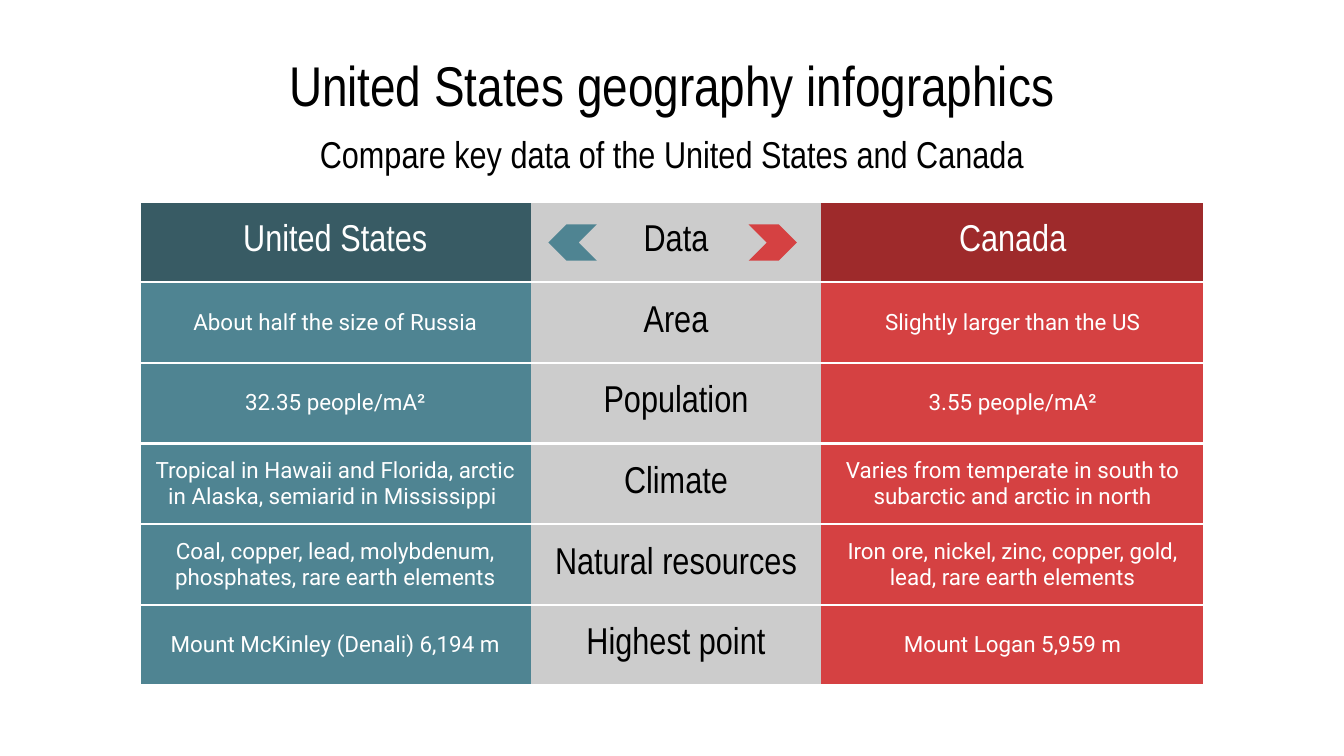
from typing import NamedTuple

from lxml.etree import SubElement
from pptx import Presentation
from pptx.dml.color import RGBColor
from pptx.enum.shapes import MSO_SHAPE
from pptx.enum.text import MSO_ANCHOR as Anchor, PP_ALIGN as Align
from pptx.oxml.ns import qn
from pptx.util import Inches, Pt

HEADING_FONT, BODY_FONT = "Arial Narrow", "Roboto"
BLACK, WHITE, GREY = "000000", "FFFFFF", "CCCCCC"
TEAL, DARK_TEAL = "4F8492", "385B64"
RED, DARK_RED = "D54142", "9E2A2B"
INSET = Inches(0.1)
SLIDE_WIDTH = 10
SLIDE_HEIGHT = SLIDE_WIDTH * 9 / 16


class Heading(NamedTuple):
    text: str
    left: float
    top: float
    width: float
    height: float
    size: int
    anchor: Anchor


class Column(NamedTuple):
    width: float
    header_fill: str
    body_fill: str
    color: str
    body_font: str
    body_size: int


class Arrow(NamedTuple):
    left: float
    fill: str
    rotation: int


HEADINGS = [
    Heading("United States geography infographics", 0.5, 0.28, 9, 0.63, 30, Anchor.TOP),
    Heading("Compare key data of the United States and Canada",
            2.11, 0.92, 5.78, 0.44, 20, Anchor.MIDDLE),
]
COLUMNS = [
    Column(2.91, DARK_TEAL, TEAL, WHITE, BODY_FONT, 12),
    Column(2.16, GREY, GREY, BLACK, HEADING_FONT, 20),
    Column(2.85, DARK_RED, RED, WHITE, BODY_FONT, 12),
]
ROWS = [
    ("United States", "Data", "Canada"),
    ("About half the size of Russia", "Area", "Slightly larger than the US"),
    ("32.35 people/mA²", "Population", "3.55 people/mA²"),
    ("Tropical in Hawaii and Florida, arctic in Alaska, semiarid in Mississippi ",
     "Climate", "Varies from temperate in south to subarctic and arctic in north"),
    ("Coal, copper, lead, molybdenum, phosphates, rare earth elements",
     "Natural resources", "Iron ore, nickel, zinc, copper, gold, lead, rare earth elements"),
    ("Mount McKinley (Denali) 6,194 m", "Highest point", "Mount Logan 5,959 m"),
]
ROW_HEIGHT = 0.6
ARROWS = [Arrow(5.57, RED, 0), Arrow(4.08, TEAL, 180)]


def rgb(value: str) -> RGBColor:
    return RGBColor.from_string(value)


def write(frame, text: str, font: str, size: int, color: str) -> None:
    frame.text = text
    paragraph = frame.paragraphs[0]
    paragraph.alignment = Align.CENTER
    style = paragraph.runs[0].font
    style.name, style.size = font, Pt(size)
    style.color.rgb = rgb(color)


def draw_heading(slide, heading: Heading) -> None:
    box = slide.shapes.add_textbox(Inches(heading.left), Inches(heading.top),
                                   Inches(heading.width), Inches(heading.height))
    frame = box.text_frame
    frame.word_wrap = True
    frame.vertical_anchor = heading.anchor
    frame.margin_left = frame.margin_right = INSET
    frame.margin_top = frame.margin_bottom = INSET
    write(frame, heading.text, HEADING_FONT, heading.size, BLACK)


def set_borders(cell, visible: str) -> None:
    """Draw the named sides in white and clear the others."""
    properties = cell._tc.get_or_add_tcPr()
    for index, side in enumerate("LRTB"):
        line = SubElement(properties, qn(f"a:ln{side}"), w=str(Pt(1.5)))
        if side in visible:
            fill = SubElement(line, qn("a:solidFill"))
            SubElement(fill, qn("a:srgbClr"), val=WHITE)
        else:
            SubElement(line, qn("a:noFill"))
        properties.insert(index, line)  # borders come before the fill


def draw_comparison(slide) -> None:
    width = sum(column.width for column in COLUMNS)
    table = slide.shapes.add_table(
        len(ROWS), len(COLUMNS), Inches(1.04), Inches(1.5),
        Inches(width), Inches(ROW_HEIGHT * len(ROWS))).table
    for grid_column, column in zip(table.columns, COLUMNS):
        grid_column.width = Inches(column.width)
    for r, texts in enumerate(ROWS):
        table.rows[r].height = Inches(ROW_HEIGHT)
        for c, (text, column) in enumerate(zip(texts, COLUMNS)):
            cell = table.cell(r, c)
            cell.vertical_anchor = Anchor.MIDDLE
            cell.margin_left = cell.margin_right = INSET
            cell.margin_top = cell.margin_bottom = INSET
            cell.fill.solid()
            cell.fill.fore_color.rgb = rgb(column.body_fill if r else column.header_fill)
            font, size = (column.body_font, column.body_size) if r else (HEADING_FONT, 20)
            write(cell.text_frame, text, font, size, column.color)
            set_borders(cell, ("LTB", "TB", "RTB")[c])


def draw_arrow(slide, arrow: Arrow) -> None:
    chevron = slide.shapes.add_shape(MSO_SHAPE.CHEVRON, Inches(arrow.left), Inches(1.67),
                                     Inches(0.36), Inches(0.27))
    chevron.rotation = arrow.rotation
    chevron.shadow.inherit = False
    chevron.fill.solid()
    chevron.fill.fore_color.rgb = rgb(arrow.fill)
    chevron.line.fill.background()


def main() -> None:
    deck = Presentation()
    deck.slide_width, deck.slide_height = Inches(SLIDE_WIDTH), Inches(SLIDE_HEIGHT)
    slide = deck.slides.add_slide(deck.slide_layouts[6])

    # Title and subtitle
    for heading in HEADINGS:
        draw_heading(slide, heading)

    # Country comparison, with arrows pointing to each side
    draw_comparison(slide)
    for arrow in ARROWS:
        draw_arrow(slide, arrow)

    deck.save("out.pptx")


if __name__ == "__main__":
    main()
